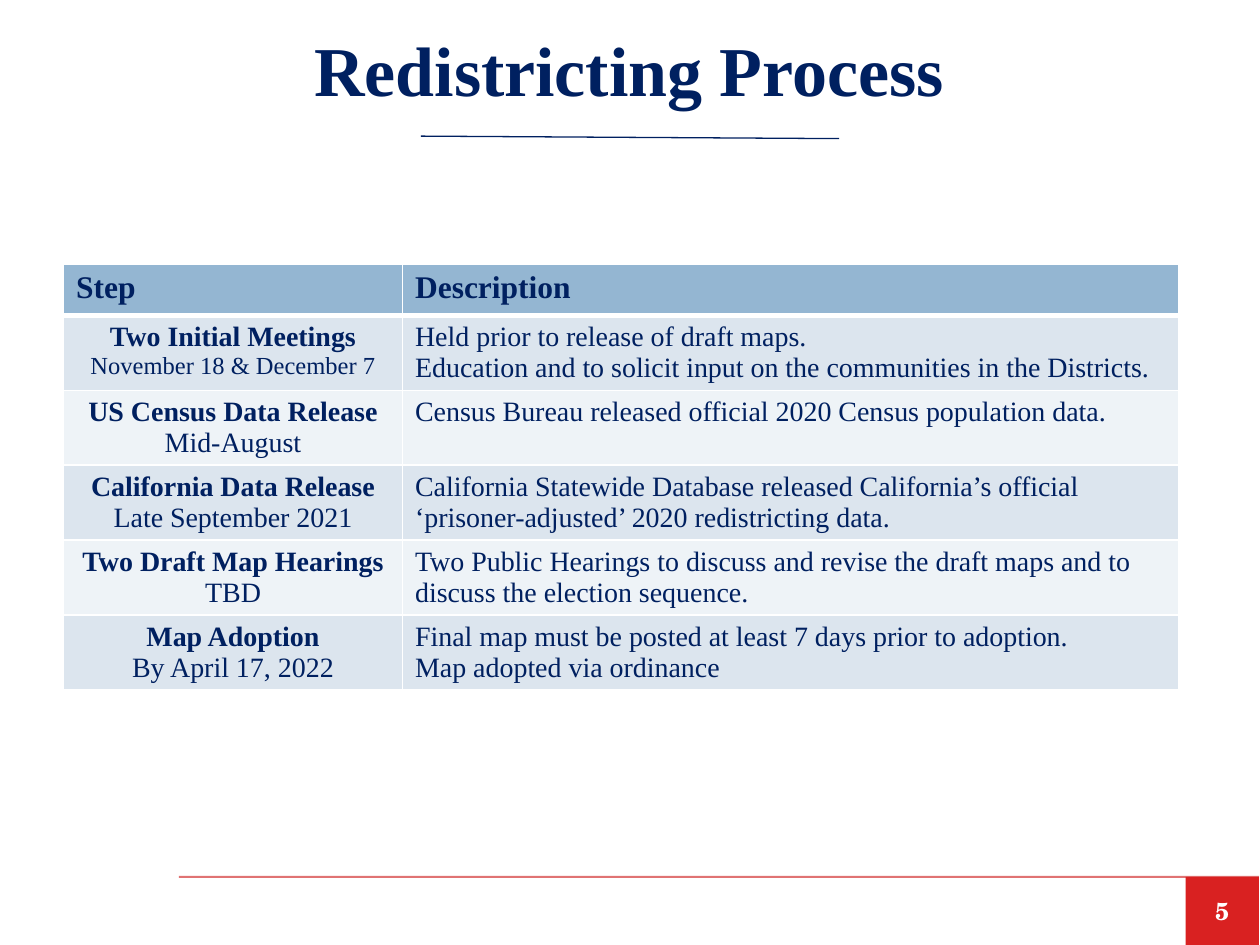
from dataclasses import dataclass

from lxml import etree
from pptx import Presentation
from pptx.dml.color import RGBColor
from pptx.enum import shapes, text
from pptx.oxml import ns
from pptx.util import Pt


@dataclass(frozen=True)
class Theme:
    navy: str = "002060"
    red: str = "D92121"
    rule_red: str = "C80000"
    white: str = "FFFFFF"
    header: str = "94B6D2"
    bands: tuple[str, str] = ("DCE5EE", "EEF3F7")
    serif: str = "Times New Roman"
    number_serif: str = "TeX Gyre Schola"
    title_size: float = 40
    header_size: float = 18
    body_size: float = 16
    small_size: float = 14


@dataclass(frozen=True)
class Step:
    name: str
    date: str
    description: tuple[str, ...]
    date_size: float = Theme.body_size


@dataclass(frozen=True)
class Rule:
    start: tuple[float, float]
    end: tuple[float, float]
    color: str
    width: float
    opacity: int = 100


@dataclass(frozen=True)
class Line:
    words: str
    size: float
    bold: bool = False
    color: str = Theme.navy
    face: str = Theme.serif


THEME = Theme()
LEFT, CENTER = text.PP_ALIGN.LEFT, text.PP_ALIGN.CENTER
HEADINGS = ("Step", "Description")
COLUMN_WIDTHS = (193.7, 443.5)
HEADER_HEIGHT, STEP_HEIGHT = 29.5, 42.6
STEPS = (
    Step("Two Initial Meetings", "November 18 & December 7",
         ("Held prior to release of draft maps.",
          "Education and to solicit input on the communities in the Districts."),
         THEME.small_size),
    Step("US Census Data Release", "Mid-August",
         ("Census Bureau released official 2020 Census population data.",)),
    Step("California Data Release", "Late September 2021",
         ("California Statewide Database released California’s official "
          "‘prisoner-adjusted’ 2020 redistricting data.",)),
    Step("Two Draft Map Hearings", "TBD",
         ("Two Public Hearings to discuss and revise the draft maps and to "
          "discuss the election sequence.",)),
    Step("Map Adoption", "By April 17, 2022",
         ("Final map must be posted at least 7 days prior to adoption.",
          "Map adopted via ordinance")),
)
FOOTER_RULE = Rule((102.2, 501.1), (719.3, 501.1), THEME.rule_red, 1.25, 55)
TITLE_RULE = Rule((240.5, 77.8), (479.5, 79.2), THEME.navy, 0.75)


def rgb(color: str) -> RGBColor:
    return RGBColor.from_string(color)


def write(frame, lines: list[Line], align) -> None:
    for index, line in enumerate(lines):
        paragraph = frame.paragraphs[0] if index == 0 else frame.add_paragraph()
        paragraph.alignment = align
        run = paragraph.add_run()
        run.text = line.words
        formats = {"name": line.face, "size": Pt(line.size), "bold": line.bold}
        for attribute, value in formats.items():
            setattr(run.font, attribute, value)
        run.font.color.rgb = rgb(line.color)


def draw_rule(slide, rule: Rule) -> None:
    connector = slide.shapes.add_connector(
        shapes.MSO_CONNECTOR.STRAIGHT, *map(Pt, rule.start + rule.end))
    connector.line.color.rgb = rgb(rule.color)
    connector.line.width = Pt(rule.width)
    properties = connector._element.spPr
    if rule.opacity < 100:
        color = properties.find(".//" + ns.qn("a:srgbClr"))
        etree.SubElement(color, ns.qn("a:alpha"), val=str(rule.opacity * 1000))
    etree.SubElement(properties, ns.qn("a:effectLst"))


def draw_title(slide) -> None:
    title = slide.shapes.title
    place = {"left": 26.6, "top": 0, "width": 666, "height": 77.8}
    for attribute, value in place.items():
        setattr(title, attribute, Pt(value))
    title.text_frame.vertical_anchor = text.MSO_ANCHOR.MIDDLE
    write(title.text_frame,
          [Line("Redistricting Process", THEME.title_size, True)], CENTER)


def draw_page_number(slide) -> None:
    badge = slide.shapes.add_shape(
        shapes.MSO_SHAPE.RECTANGLE, *map(Pt, (677.5, 501.1, 41.8, 38.9)))
    badge.shadow.inherit = False
    badge.fill.solid()
    badge.fill.fore_color.rgb = rgb(THEME.red)
    badge.line.fill.background()
    badge.text_frame.vertical_anchor = text.MSO_ANCHOR.MIDDLE
    write(badge.text_frame,
          [Line("5", THEME.small_size, True, THEME.white, THEME.number_serif)],
          CENTER)


def fill_cell(cell, lines: list[Line], align, color: str,
              top: float = 1, bottom: float = 1) -> None:
    write(cell.text_frame, lines, align)
    properties = cell._tc.get_or_add_tcPr()
    for side, width in {"L": 1, "R": 1, "T": top, "B": bottom}.items():
        border = etree.SubElement(properties, ns.qn(f"a:ln{side}"), w=str(Pt(width)))
        solid = etree.SubElement(border, ns.qn("a:solidFill"))
        etree.SubElement(solid, ns.qn("a:srgbClr"), val=THEME.white)
    cell.fill.solid()
    cell.fill.fore_color.rgb = rgb(color)


def draw_steps(slide) -> None:
    heights = (HEADER_HEIGHT,) + (STEP_HEIGHT,) * len(STEPS)
    table = slide.shapes.add_table(
        len(heights), len(COLUMN_WIDTHS), Pt(36.3), Pt(150.8),
        Pt(sum(COLUMN_WIDTHS)), Pt(sum(heights))).table
    for column, width in zip(table.columns, COLUMN_WIDTHS):
        column.width = Pt(width)
    for row, height in zip(table.rows, heights):
        row.height = Pt(height)
    for index, heading in enumerate(HEADINGS):
        fill_cell(table.cell(0, index), [Line(heading, THEME.header_size, True)],
                  LEFT, THEME.header, bottom=3)
    for index, step in enumerate(STEPS):
        band = THEME.bands[index % 2]
        top = 3 if index == 0 else 1
        label = [Line(step.name, THEME.body_size, True),
                 Line(step.date, step.date_size)]
        details = [Line(words, THEME.body_size) for words in step.description]
        fill_cell(table.cell(index + 1, 0), label, CENTER, band, top)
        fill_cell(table.cell(index + 1, 1), details, LEFT, band, top)


def main() -> None:
    deck = Presentation()
    deck.slide_width, deck.slide_height = Pt(720), Pt(540)
    slide = deck.slides.add_slide(deck.slide_layouts.get_by_name("Title Only"))
    draw_rule(slide, FOOTER_RULE)
    draw_title(slide)
    draw_page_number(slide)
    draw_rule(slide, TITLE_RULE)
    draw_steps(slide)
    deck.save("out.pptx")


if __name__ == "__main__":
    main()
